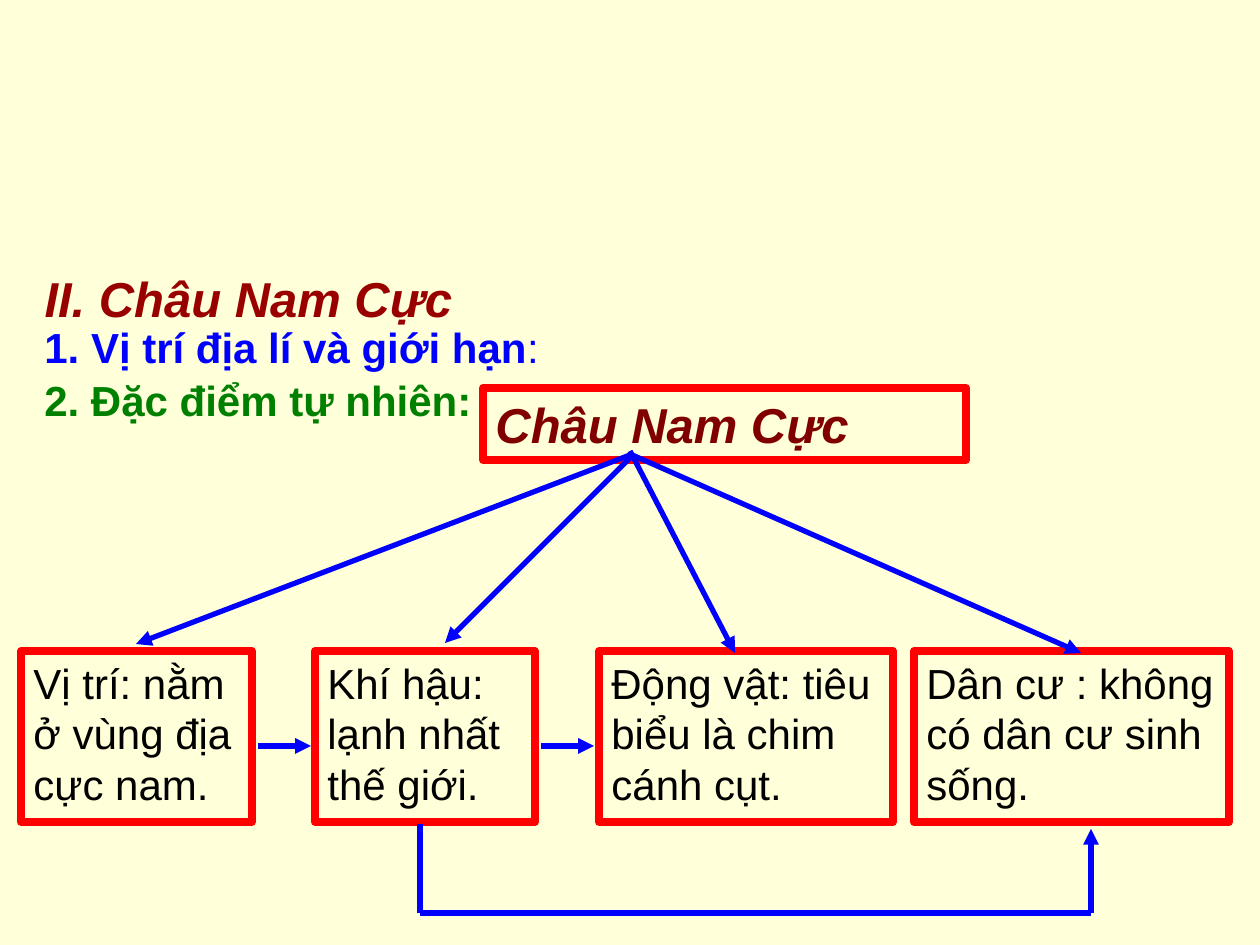
from lxml import etree
from pptx import Presentation
from pptx.dml.color import RGBColor
from pptx.enum.shapes import MSO_CONNECTOR, MSO_SHAPE
from pptx.enum.text import MSO_ANCHOR, MSO_AUTO_SIZE, PP_ALIGN
from pptx.oxml.ns import qn
from pptx.util import Pt

RECT = MSO_SHAPE.RECTANGLE
STRAIGHT = MSO_CONNECTOR.STRAIGHT
TOP, LEFT = MSO_ANCHOR.TOP, PP_ALIGN.LEFT
FIT_SHAPE = MSO_AUTO_SIZE.SHAPE_TO_FIT_TEXT

THEME = dict(font="Arial", background="FFFFD9", title="990000", position="0000FF",
             nature="008000", topic="800000", body="000000", frame="FF0000",
             arrow="0000FF", large=28, normal=24, frame_width=4.5, arrow_width=3)

# Content; all lengths in px, 126 to the inch
TITLE = "II. Châu Nam Cực"
HEADINGS = [  # bold text, plain ending, colour, width
    ("1. Vị trí địa lí và giới hạn", ":", THEME["position"], 525),
    ("2. Đặc điểm tự nhiên:", "", THEME["nature"], 504),
]
TOPIC = "Châu Nam Cực"
FEATURES = [  # text, left, width, start and end of the arrow from the topic
    ("Vị trí: nằm ở vùng địa cực nam.", 21, 231, (630, 455), (136, 644)),
    ("Khí hậu: lạnh nhất thế giới.", 315, 220, (634, 454), (445, 643)),
    ("Động vật: tiêu biểu là chim cánh cụt.", 599, 294, (630, 451), (735, 653)),
    ("Dân cư : không có dân cư sinh sống.", 914, 315, (630, 454), (1081, 653)),
]
MARGIN, HEADING_TOP, HEADING_STEP = 32, 315, 53
FEATURE_TOP, FEATURE_HEIGHT = 651, 171
LINK_Y, LINK_GAP, LINK_LENGTH = 746, 6, 53
DETOUR = [(420, 824), (420, 913), (1091, 913), (1091, 829)]


def px(length):
    return round(length * 914400 / 126)


def write(shape, text, color, size=THEME["normal"], bold=False, italic=False, ending=""):
    frame = shape.text_frame
    frame.word_wrap = True
    frame.auto_size = FIT_SHAPE
    frame.vertical_anchor = TOP
    paragraph = frame.paragraphs[0]
    paragraph.alignment = LEFT
    for part, is_bold in ((text, bold), (ending, False)):
        if part:
            run = paragraph.add_run()
            run.text = part
            run.font.name = THEME["font"]
            run.font.size = Pt(size)
            run.font.bold = is_bold
            run.font.italic = italic
            run.font.color.rgb = RGBColor.from_string(color)


def add_frame(slide, left, top, width, height):
    box = slide.shapes.add_shape(RECT, px(left), px(top), px(width), px(height))
    box.shadow.inherit = False
    box.fill.background()
    box.line.color.rgb = RGBColor.from_string(THEME["frame"])
    box.line.width = Pt(THEME["frame_width"])
    return box


def add_line(slide, start, end, arrow=True):
    line = slide.shapes.add_connector(STRAIGHT, *map(px, start + end))
    line.line.color.rgb = RGBColor.from_string(THEME["arrow"])
    line.line.width = Pt(THEME["arrow_width"])
    properties = line._element.spPr
    if arrow:
        etree.SubElement(properties.find(qn("a:ln")), qn("a:tailEnd"), type="triangle")
    etree.SubElement(properties, qn("a:effectLst"))


def main():
    deck = Presentation()
    deck.slide_width, deck.slide_height = px(1260), px(945)
    slide = deck.slides.add_slide(deck.slide_layouts[5])
    slide.background.fill.solid()
    slide.background.fill.fore_color.rgb = RGBColor.from_string(THEME["background"])

    # Title and headings
    title = slide.shapes.title
    title.left, title.top, title.width, title.height = map(px, (MARGIN, 262, 451, 72))
    write(title, TITLE, THEME["title"], size=THEME["large"], bold=True, italic=True)
    for row, (text, ending, color, width) in enumerate(HEADINGS):
        heading = slide.shapes.add_textbox(
            px(MARGIN), px(HEADING_TOP + row * HEADING_STEP), px(width), px(63))
        write(heading, text, color, bold=True, ending=ending)

    # Topic and its features
    topic = add_frame(slide, 483, 388, 483, 72)
    write(topic, TOPIC, THEME["topic"], size=THEME["large"], bold=True, italic=True)
    for text, left, width, _, _ in FEATURES:
        feature = add_frame(slide, left, FEATURE_TOP, width, FEATURE_HEIGHT)
        write(feature, text, THEME["body"])

    # Arrows from the topic to each feature
    for _, _, _, start, end in FEATURES:
        add_line(slide, start, end)

    # Arrows between the first three features
    for _, left, width, _, _ in FEATURES[:2]:
        start = left + width + LINK_GAP
        add_line(slide, (start, LINK_Y), (start + LINK_LENGTH, LINK_Y))

    # Detour from climate to population
    for start, end in zip(DETOUR, DETOUR[1:]):
        add_line(slide, start, end, arrow=end == DETOUR[-1])

    deck.save("out.pptx")


if __name__ == "__main__":
    main()
